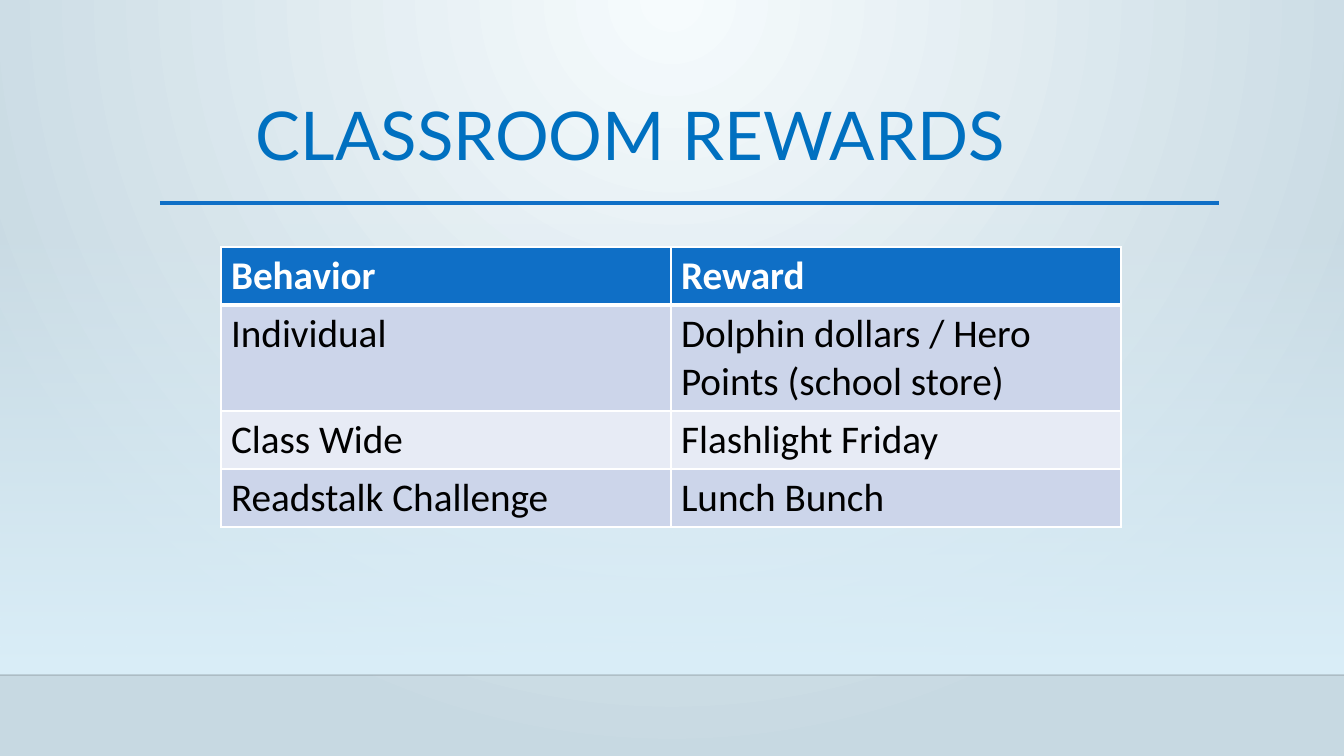
from lxml import etree
from pptx import Presentation
from pptx.dml.color import RGBColor
from pptx.enum.shapes import MSO_CONNECTOR, MSO_SHAPE
from pptx.enum.text import MSO_ANCHOR
from pptx.oxml.ns import qn
from pptx.util import Pt

STRAIGHT = MSO_CONNECTOR.STRAIGHT
RECTANGLE = MSO_SHAPE.RECTANGLE
MIDDLE = MSO_ANCHOR.MIDDLE

PAGE_WIDTH, PAGE_HEIGHT = 1344, 756
EMU_PER_PX = 12192000 / PAGE_WIDTH

GLOW = RGBColor(0xF6, 0xFB, 0xFD)
MIST = RGBColor(0xC7, 0xD9, 0xE2)
SKY = RGBColor(0xDB, 0xEF, 0xF9)
FLOOR_EDGE = RGBColor(0x00, 0x00, 0x01)
BLUE = RGBColor(0x0F, 0x6F, 0xC6)
TITLE_BLUE = RGBColor(0x00, 0x70, 0xC0)
WHITE = RGBColor(0xFF, 0xFF, 0xFF)
BLACK = RGBColor(0x00, 0x00, 0x00)
BAND_DARK = RGBColor(0xCC, 0xD5, 0xEA)
BAND_LIGHT = RGBColor(0xE7, 0xEB, 0xF5)

REWARDS = [
    ("Behavior", "Reward"),
    ("Individual", "Dolphin dollars / Hero Points (school store)"),
    ("Class Wide", "Flashlight Friday"),
    ("Readstalk Challenge", "Lunch Bunch"),
]
ROW_HEIGHTS = [58, 106, 58, 58]


def px(length):
    return round(length * EMU_PER_PX)


def add_element(parent, tag, **attributes):
    return etree.SubElement(parent, qn(tag), attributes)


def set_gradient(fill, start, end):
    fill.gradient()
    for stop, color, position in zip(fill.gradient_stops, (start, end), (0, 1)):
        stop.color.rgb = color
        stop.position = position


def set_alpha(element, percent):
    """Make the first colour inside the element partly transparent."""
    color = next(element.iter(qn("a:srgbClr")))
    add_element(color, "a:alpha", val=str(percent * 1000))


def add_rule(page, left, top, width, color, points):
    rule = page.shapes.add_connector(
        STRAIGHT, px(left), px(top), px(left + width), px(top))
    rule.line.color.rgb = color
    rule.line.width = Pt(points)
    add_element(rule.element.spPr, "a:effectLst")
    return rule


def add_span(para, text, font_name, size, color, bold=False):
    span = para.add_run()
    span.text = text
    span.font.name = font_name
    span.font.size = Pt(size)
    span.font.color.rgb = color
    span.font.bold = bold


def paint_background(page):
    set_gradient(page.background.fill, GLOW, MIST)
    gradient = next(page.element.iter(qn("a:gradFill")))
    linear = gradient.find(qn("a:lin"))
    circle = etree.Element(qn("a:path"), {"path": "circle"})
    add_element(circle, "a:fillToRect", l="43000", t="0", r="43000", b="100000")
    gradient.replace(linear, circle)


def add_backdrop(page, left, top, width, height):
    """Place the haze that deepens downwards and the floor edge below it."""
    haze = page.shapes.add_shape(
        RECTANGLE, px(left), px(top), px(width), px(height))
    haze.shadow.inherit = False
    haze.line.fill.background()
    set_gradient(haze.fill, SKY, SKY)
    haze.fill.gradient_angle = 270
    set_alpha(haze.element.spPr, 0)
    edge = add_rule(page, left, top + height, width, FLOOR_EDGE, 1)
    set_alpha(edge.element.spPr, 20)


def add_title(page, left, top, width, height):
    box = page.shapes.add_textbox(px(left), px(top), px(width), px(height))
    frame = box.text_frame
    frame.word_wrap = True
    frame.vertical_anchor = MIDDLE
    para = frame.paragraphs[0]
    para.line_spacing = 0.9
    add_span(para, "CLASSROOM REWARDS", "Lato", 48, TITLE_BLUE)


def set_border(cell, side, points):
    border = add_element(cell._tc.get_or_add_tcPr(), f"a:ln{side}", w=str(Pt(points)))
    solid = add_element(border, "a:solidFill")
    add_element(solid, "a:srgbClr", val=str(WHITE))


def add_rewards_table(page, left, top, width):
    table = page.shapes.add_table(
        len(REWARDS), len(REWARDS[0]), px(left), px(top),
        px(width), px(sum(ROW_HEIGHTS))).table
    for column in table.columns:
        column.width = px(width / len(REWARDS[0]))
    for row_index, (texts, height) in enumerate(zip(REWARDS, ROW_HEIGHTS)):
        table.rows[row_index].height = px(height)
        is_header = row_index == 0
        band = BAND_DARK if row_index % 2 else BAND_LIGHT
        for column_index, text in enumerate(texts):
            cell = table.cell(row_index, column_index)
            for side in "LRTB":
                heavy = (side == "B" and is_header) or (side == "T" and row_index == 1)
                set_border(cell, side, 3 if heavy else 1)
            cell.fill.solid()
            cell.fill.fore_color.rgb = BLUE if is_header else band
            add_span(cell.text_frame.paragraphs[0], text, "Calibri", 28,
                     WHITE if is_header else BLACK, is_header)


def build_rewards_slide(deck):
    page = deck.slides.add_slide(deck.slide_layouts[6])
    paint_background(page)
    add_backdrop(page, 0, 223, PAGE_WIDTH, 452)
    add_rule(page, 160, 203, 1059, BLUE, 2.5)
    add_title(page, 246, 75, 875, 127)
    add_rewards_table(page, 221, 247, 900)


def main():
    deck = Presentation()
    deck.slide_width = px(PAGE_WIDTH)
    deck.slide_height = px(PAGE_HEIGHT)
    build_rewards_slide(deck)
    deck.save("out.pptx")


if __name__ == "__main__":
    main()
